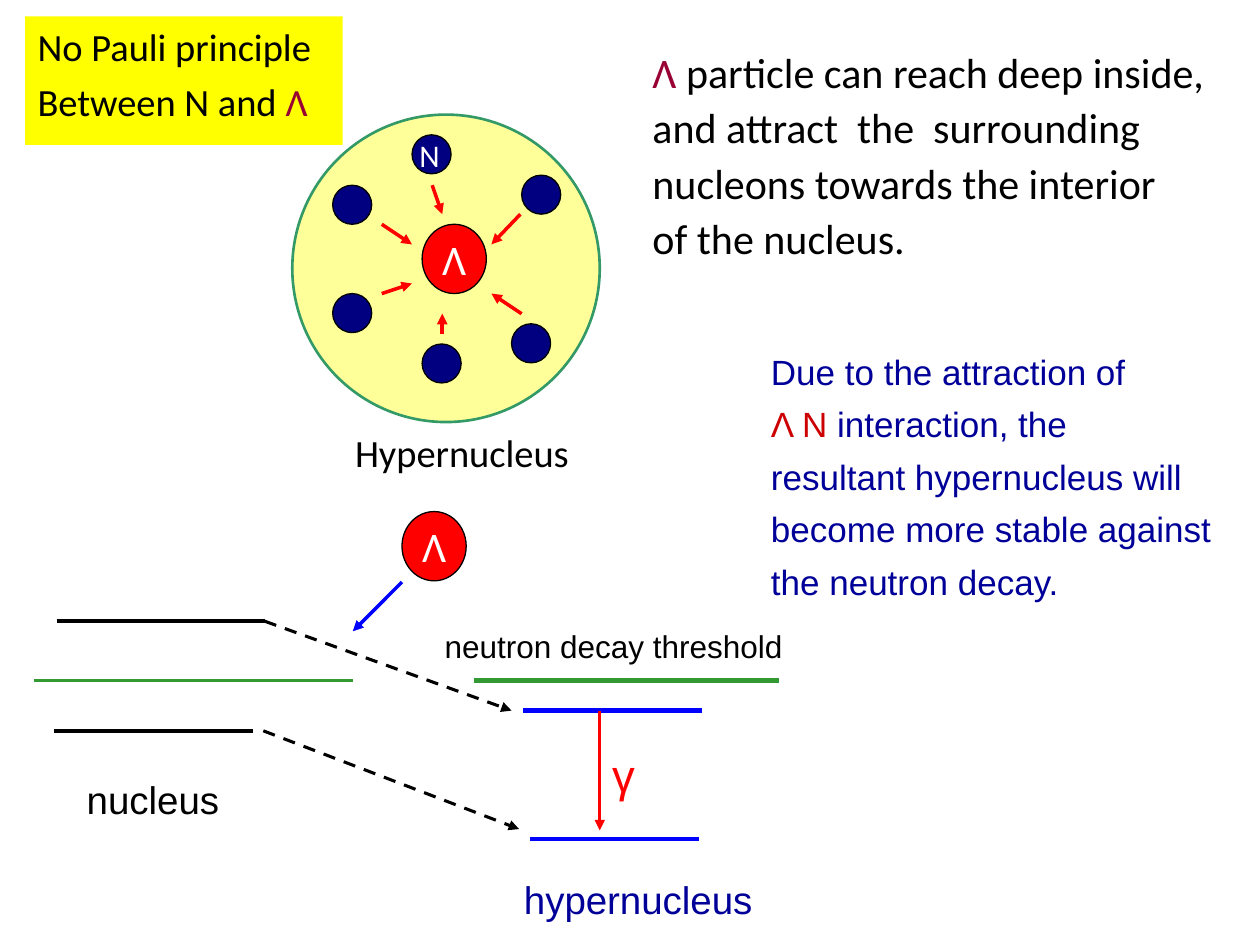
"""Build the slide on the Λ particle inside a hypernucleus."""
import pptx
import pptx.dml.color
import pptx.enum.dml
import pptx.enum.shapes
import pptx.enum.text
import pptx.oxml.ns
import pptx.util
from lxml import etree

RGBColor = pptx.dml.color.RGBColor
BLACK = RGBColor(0x00, 0x00, 0x00)
WHITE = RGBColor(0xFF, 0xFF, 0xFF)
RED = RGBColor(0xFF, 0x00, 0x00)
DARK_RED = RGBColor(0xCC, 0x00, 0x00)
WINE = RGBColor(0x99, 0x00, 0x33)
BLUE = RGBColor(0x00, 0x00, 0xFF)
DARK_BLUE = RGBColor(0x00, 0x00, 0x99)
NAVY = RGBColor(0x00, 0x00, 0x80)
GREEN = RGBColor(0x33, 0x99, 0x33)
SEA_GREEN = RGBColor(0x33, 0x99, 0x66)
YELLOW = RGBColor(0xFF, 0xFF, 0x00)
PALE_YELLOW = RGBColor(0xFF, 0xFF, 0x99)

EMU_PER_PX = 9144
NUCLEON_SIZE = 31
OVAL = pptx.enum.shapes.MSO_SHAPE.OVAL
RECTANGLE = pptx.enum.shapes.MSO_SHAPE.RECTANGLE
DASH = pptx.enum.dml.MSO_LINE.DASH
CENTER = pptx.enum.text.PP_ALIGN.CENTER

NUCLEONS = [(264, 147), (264, 233), (327, 107), (335, 273), (414, 139), (406, 257)]
ATTRACTIONS = [
    (343, 147, 351, 170), (303, 178, 327, 194), (303, 233, 327, 225),
    (351, 265, 351, 249), (414, 249, 390, 233), (413, 170, 390, 194),
]
LEVELS = [
    (27, 280, 540, GREEN, 2), (376, 618, 540, GREEN, 2.5),
    (43, 201, 580, BLACK, 2.5), (45, 210, 493, BLACK, 2.5),
    (415, 557, 564, BLUE, 2.5), (421, 555, 666, BLUE, 2.5),
]
LEVEL_SHIFTS = [(209, 580, 412, 658), (210, 493, 406, 564)]
LABELS = [
    ("Hypernucleus", (272, 336, 190, 47), 22, "Calibri", BLACK),
    ("γ", (476, 588, 56, 53), 26, "Arial", RED),
    ("nucleus", (59, 611, 126, 47), 22, "Arial", BLACK),
    ("hypernucleus", (406, 690, 202, 47), 22, "Arial", DARK_BLUE),
    ("neutron decay threshold", (343, 493, 288, 40), 18, "Arial", BLACK),
    ("N", (323, 103, 37, 40), 18, "Calibri", WHITE),
]


def px(*lengths):
    """Turn px lengths into EMU."""
    return [pptx.util.Emu(length * EMU_PER_PX) for length in lengths]


def write_text(frame, paragraphs, *, size, font, color, spacing=1.0,
               first_spacing=1.0, align=None, wrap=False):
    """Fill a frame with paragraphs, each a string or a list of (text, color) spans."""
    frame.word_wrap = wrap
    for index, content in enumerate(paragraphs):
        para = frame.add_paragraph() if index else frame.paragraphs[0]
        para.line_spacing = spacing if index else first_spacing
        para.alignment = align
        spans = [(content, color)] if isinstance(content, str) else content
        for text, span_color in spans:
            span = para.add_run()
            span.text = text
            span.font.size = pptx.util.Pt(size)
            span.font.name = font
            span.font.color.rgb = span_color


def add_text(page, paragraphs, bounds, **text_format):
    """Add a text box that grows with its text."""
    box = page.shapes.add_textbox(*px(*bounds))
    write_text(box.text_frame, paragraphs, **text_format)
    box.text_frame.auto_size = pptx.enum.text.MSO_AUTO_SIZE.SHAPE_TO_FIT_TEXT


def add_figure(page, kind, bounds, fill, line=None, width=0.75):
    """Add a filled preset shape, outlined if a line color is given."""
    shape = page.shapes.add_shape(kind, *px(*bounds))
    shape.shadow.inherit = False
    shape.fill.solid()
    shape.fill.fore_color.rgb = fill
    if line is None:
        shape.line.fill.background()
    else:
        shape.line.color.rgb = line
        shape.line.width = pptx.util.Pt(width)
    return shape


def add_lambda(page, left, top):
    """Add a red ball labelled Λ."""
    ball = add_figure(page, OVAL, (left, top, 51, 55), RED, BLACK)
    write_text(ball.text_frame, ["Λ"], size=24, font="Calibri", color=WHITE, align=CENTER)
    ball.text_frame.vertical_anchor = pptx.enum.text.MSO_ANCHOR.MIDDLE


def add_line(page, ends, color, width, dash=None, arrow=False):
    """Add a straight line, with an arrowhead at its end if asked."""
    line = page.shapes.add_connector(pptx.enum.shapes.MSO_CONNECTOR.STRAIGHT, *px(*ends))
    line.line.color.rgb = color
    line.line.width = pptx.util.Pt(width)
    if dash is not None:
        line.line.dash_style = dash
    qn = pptx.oxml.ns.qn
    properties = line.element.spPr
    if arrow:
        etree.SubElement(properties.find(qn("a:ln")), qn("a:tailEnd"), type="triangle")
    etree.SubElement(properties, qn("a:effectLst"))


def draw_nucleus(page):
    """Draw the hypernucleus with its nucleons drawn towards the Λ."""
    add_figure(page, OVAL, (232, 91, 244, 244), PALE_YELLOW, SEA_GREEN, 1.5)
    for left, top in NUCLEONS:
        add_figure(page, OVAL, (left, top, NUCLEON_SIZE, NUCLEON_SIZE), NAVY, BLACK)
    for ends in ATTRACTIONS:
        add_line(page, ends, RED, 2, arrow=True)
    add_lambda(page, 335, 178)


def draw_levels(page):
    """Draw the energy levels and the transitions between them."""
    for start, end, height, color, width in LEVELS:
        add_line(page, (start, height, end, height), color, width)
    for ends in LEVEL_SHIFTS:
        add_line(page, ends, BLACK, 1.75, dash=DASH, arrow=True)
    add_line(page, (476, 564, 476, 659), RED, 1.5, arrow=True)
    add_lambda(page, 319, 406)
    add_line(page, (319, 462, 280, 501), BLUE, 2, arrow=True)


def write_statements(page):
    """Write the three explanations."""
    add_text(page, ["No Pauli principle", [("Between N and ", BLACK), ("Λ", WINE)]],
             (20, 13, 248, 91), size=22, font="Calibri", color=BLACK, spacing=1.2)
    reach = " particle can reach deep inside, and attract  the  surrounding nucleons towards the interior"
    add_text(page, [[("Λ", WINE), (reach, BLACK)], "of the nucleus."],
             (508, 28, 469, 186), size=24, font="Calibri", color=BLACK,
             spacing=1.1, first_spacing=1.1, wrap=True)
    add_text(page, ["Due to the attraction of",
                    [("Λ N", DARK_RED), (" interaction, the", DARK_BLUE)],
                    "resultant hypernucleus will",
                    "become more stable against",
                    "the neutron decay."],
             (602, 273, 372, 202), size=20, font="Arial", color=DARK_BLUE, spacing=1.25)


def main():
    """Build and save the deck."""
    deck = pptx.Presentation()
    deck.slide_width, deck.slide_height = px(1000, 750)
    page = deck.slides.add_slide(deck.slide_layouts[6])
    add_figure(page, RECTANGLE, (20, 13, 252, 102), YELLOW)
    draw_nucleus(page)
    draw_levels(page)
    write_statements(page)
    for text, bounds, size, font, color in LABELS:
        add_text(page, [text], bounds, size=size, font=font, color=color)
    deck.save("out.pptx")


if __name__ == "__main__":
    main()
